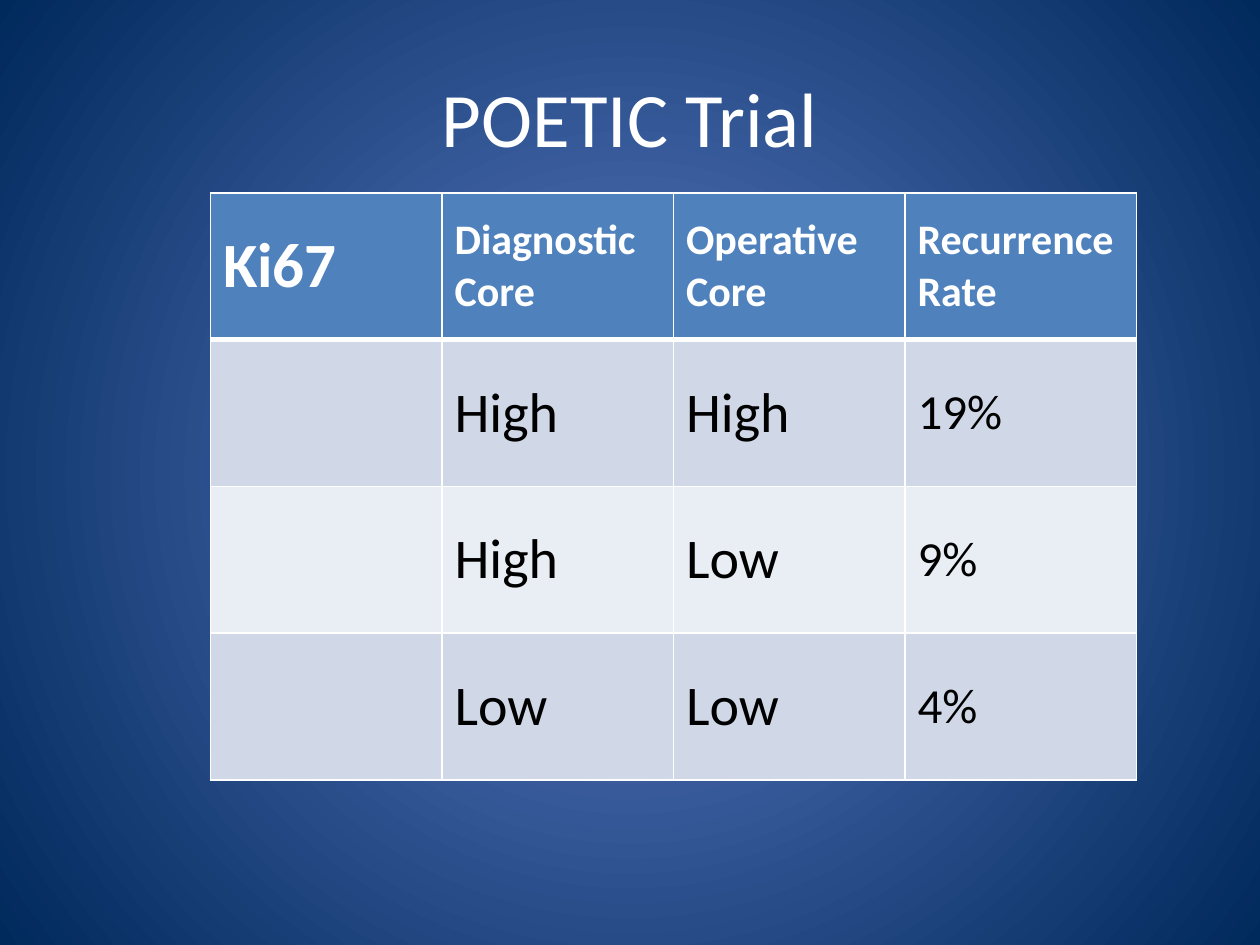
from dataclasses import dataclass
from lxml import etree
from pptx import Presentation
from pptx.dml.color import RGBColor
from pptx.enum.text import MSO_ANCHOR, PP_ALIGN
from pptx.oxml.ns import qn
from pptx.util import Inches, Pt

MIDDLE = MSO_ANCHOR.MIDDLE
LEFT, CENTER = PP_ALIGN.LEFT, PP_ALIGN.CENTER


@dataclass(frozen=True)
class Theme:
    font: str = "Calibri"
    white: str = "FFFFFF"
    black: str = "000000"
    glow: str = "5E7CC5"
    navy: str = "00295C"
    head: str = "4F81BD"
    bands: tuple = ("D0D8E8", "E9EDF4")
    title: int = 44
    head_sizes: tuple = (36, 24, 24, 24)
    body_sizes: tuple = (32, 32, 32, 28)
    thin: int = 1
    thick: int = 3


def write(frame, text, size, color, font, bold=False, align=LEFT):
    para = frame.paragraphs[0]
    para.alignment = align
    run = para.add_run()
    run.text = text
    run.font.name = font
    run.font.size = Pt(size)
    run.font.bold = bold
    run.font.color.rgb = RGBColor.from_string(color)


class Painter:
    def __init__(self, slide, theme):
        self.slide = slide
        self.theme = theme

    def backdrop(self):
        fill = self.slide.background.fill
        fill.gradient()
        for stop, color in zip(fill.gradient_stops, (self.theme.glow, self.theme.navy)):
            stop.color.rgb = RGBColor.from_string(color)
        grad = next(self.slide.element.iter(qn("a:gradFill")))
        grad.remove(grad.find(qn("a:lin")))
        shade = etree.SubElement(grad, qn("a:path"), path="circle")
        sides = dict.fromkeys("ltrb", "50000")
        etree.SubElement(shade, qn("a:fillToRect"), **sides)

    def title(self, text, left, top, width, height):
        box = self.slide.shapes.add_textbox(
            Inches(left), Inches(top), Inches(width), Inches(height))
        frame = box.text_frame
        frame.word_wrap = True
        frame.vertical_anchor = MIDDLE
        write(frame, text, self.theme.title, self.theme.white,
              self.theme.font, align=CENTER)

    def border(self, cell, row):
        widths = {side: self.theme.thin for side in "LRTB"}
        if row < 2:
            widths["B" if row == 0 else "T"] = self.theme.thick
        props = cell._tc.get_or_add_tcPr()
        for side, width in widths.items():
            line = etree.SubElement(props, qn(f"a:ln{side}"), w=str(Pt(width)))
            solid = etree.SubElement(line, qn("a:solidFill"))
            etree.SubElement(solid, qn("a:srgbClr"), val=self.theme.white)

    def table(self, rows, left, top, width, height):
        theme = self.theme
        grid = self.slide.shapes.add_table(
            len(rows), len(rows[0]), Inches(left), Inches(top),
            Inches(width), Inches(height)).table
        for r, row in enumerate(rows):
            head = r == 0
            fill = theme.head if head else theme.bands[(r - 1) % 2]
            sizes = theme.head_sizes if head else theme.body_sizes
            color = theme.white if head else theme.black
            for c, text in enumerate(row):
                cell = grid.cell(r, c)
                cell.vertical_anchor = MIDDLE
                self.border(cell, r)
                cell.fill.solid()
                cell.fill.fore_color.rgb = RGBColor.from_string(fill)
                if text:
                    write(cell.text_frame, text, sizes[c], color,
                          theme.font, bold=head)


def main():
    deck = Presentation()
    deck.slide_width, deck.slide_height = Inches(10), Inches(7.5)
    slide = deck.slides.add_slide(deck.slide_layouts[6])
    paint = Painter(slide, Theme())
    paint.backdrop()
    paint.title("POETIC Trial", 0.5, 0.3, 9, 1.25)
    paint.table([
        ("Ki67", "Diagnostic Core", "Operative Core", "Recurrence Rate"),
        ("", "High", "High", "19%"),
        ("", "High", "Low", "9%"),
        ("", "Low", "Low", "4%"),
    ], 1.67, 1.53, 7.35, 4.66)
    deck.save("out.pptx")


if __name__ == "__main__":
    main()
